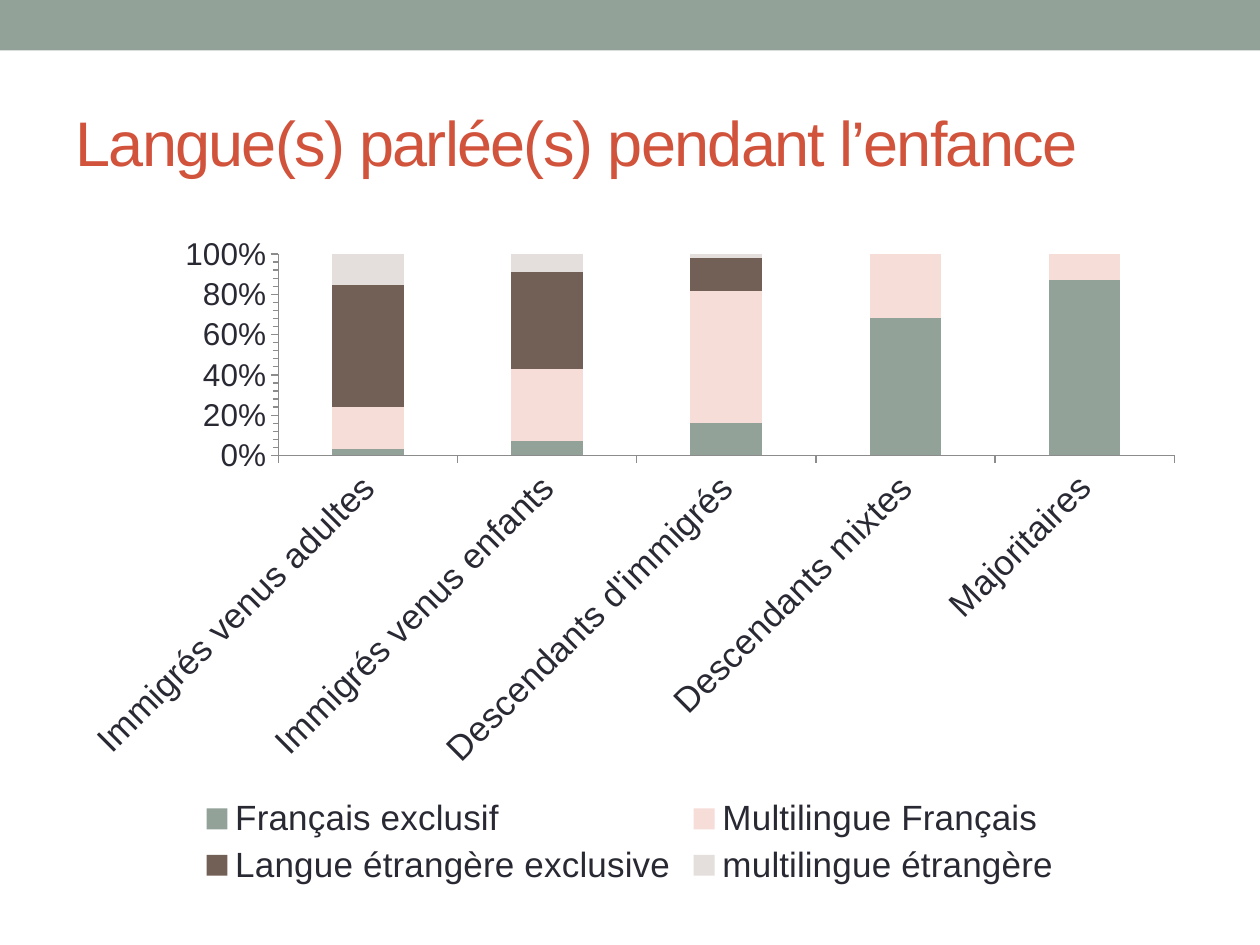
"""Build a slide charting the languages spoken in childhood by origin group."""
from dataclasses import dataclass

from lxml import etree
from pptx import Presentation
from pptx.chart.data import CategoryChartData
from pptx.dml.color import RGBColor
from pptx.enum.chart import XL_CHART_TYPE, XL_LEGEND_POSITION, XL_TICK_MARK
from pptx.enum.shapes import MSO_SHAPE
from pptx.enum.text import MSO_ANCHOR, PP_ALIGN
from pptx.oxml.ns import qn
from pptx.util import Inches, Pt

STACKED = XL_CHART_TYPE.COLUMN_STACKED_100
BOTTOM = XL_LEGEND_POSITION.BOTTOM
OUTSIDE = XL_TICK_MARK.OUTSIDE
RECTANGLE = MSO_SHAPE.RECTANGLE
MIDDLE = MSO_ANCHOR.MIDDLE
LEFT = PP_ALIGN.LEFT


@dataclass(frozen=True)
class Theme:
    font: str = "Arial"
    band: str = "93A299"
    title: str = "D2533C"
    text: str = "292934"
    axis: str = "8C8C8C"
    title_size: int = 36
    label_size: int = 20
    scale_size: int = 18


@dataclass(frozen=True)
class Language:
    name: str
    values: tuple[int, ...]
    color: str


THEME = Theme()
GROUPS = (
    "Immigrés venus adultes",
    "Immigrés venus enfants",
    "Descendants d'immigrés",
    "Descendants mixtes",
    "Majoritaires",
)
LANGUAGES = (
    Language("Français exclusif", (3, 7, 16, 68, 87), THEME.band),
    Language("Multilingue Français", (21, 36, 65, 32, 13), "F6DDD8"),
    Language("Langue étrangère exclusive", (60, 48, 16, 0, 0), "726056"),
    Language("multilingue étrangère", (15, 9, 2, 0, 0), "E4DFDC"),
)
PLOT_LAYOUT = {"x": 0.19, "y": 0.05, "w": 0.79, "h": 0.3}


def rgb(color: str) -> RGBColor:
    return RGBColor.from_string(color)


def set_font(font, size: int, color: str) -> None:
    font.name = THEME.font
    font.size = Pt(size)
    font.color.rgb = rgb(color)


def add_band(slide) -> None:
    sp = slide.shapes.add_shape(RECTANGLE, 0, 0, Inches(10), Inches(0.4))
    sp.shadow.inherit = False
    sp.fill.solid()
    sp.fill.fore_color.rgb = rgb(THEME.band)
    sp.line.fill.background()


def set_title(slide, text: str) -> None:
    sp = slide.shapes.title
    sp.left, sp.top = Inches(0.5), Inches(0.58)
    sp.width, sp.height = Inches(9), Inches(1.08)
    tf = sp.text_frame
    tf.vertical_anchor = MIDDLE
    p = tf.paragraphs[0]
    p.alignment = LEFT
    set_font(p.font, THEME.title_size, THEME.title)
    r = p.add_run()
    r.text = text
    r._r.get_or_add_rPr().set("spc", "-100")


def format_axis(axis, size: int) -> None:
    axis.has_major_gridlines = False
    axis.major_tick_mark = OUTSIDE
    axis.format.line.color.rgb = rgb(THEME.axis)
    axis.format.line.width = Pt(0.75)
    set_font(axis.tick_labels.font, size, THEME.text)


def place_plot(chart) -> None:
    area = chart._chartSpace.chart.plotArea
    for old in area.findall(qn("c:layout")):
        area.remove(old)
    layout = etree.Element(qn("c:layout"))
    manual = etree.SubElement(layout, qn("c:manualLayout"))
    settings = {"layoutTarget": "inner", "xMode": "edge", "yMode": "edge", **PLOT_LAYOUT}
    for tag, value in settings.items():
        etree.SubElement(manual, qn(f"c:{tag}")).set("val", str(value))
    area.insert(0, layout)


def add_language_chart(slide) -> None:
    data = CategoryChartData()
    data.categories = GROUPS
    for language in LANGUAGES:
        data.add_series(language.name, language.values)
    chart = slide.shapes.add_chart(
        STACKED, Inches(0.5), Inches(1.75), Inches(9), Inches(5.33), data
    ).chart
    chart.has_title = False
    set_font(chart.font, 10, THEME.text)

    plot = chart.plots[0]
    plot.gap_width, plot.overlap = 150, 100
    plot.vary_by_categories = False
    for series, language in zip(plot.series, LANGUAGES):
        series.format.fill.solid()
        series.format.fill.fore_color.rgb = rgb(language.color)

    format_axis(chart.category_axis, THEME.label_size)
    labels = chart.category_axis._element.find(qn("c:txPr"))
    labels.find(qn("a:bodyPr")).set("rot", "-2700000")

    scale = chart.value_axis
    format_axis(scale, THEME.scale_size)
    scale.minor_tick_mark = OUTSIDE
    scale.minimum_scale, scale.maximum_scale, scale.major_unit = 0, 1, 0.2
    scale.tick_labels.number_format = "0%"
    scale.tick_labels.number_format_is_linked = False

    chart.has_legend = True
    chart.legend.position = BOTTOM
    chart.legend.include_in_layout = False
    set_font(chart.legend.font, THEME.label_size, THEME.text)
    place_plot(chart)


def main() -> None:
    prs = Presentation()
    prs.slide_width, prs.slide_height = Inches(10), Inches(7.5)
    s = prs.slides.add_slide(prs.slide_layouts[5])
    add_band(s)
    set_title(s, "Langue(s) parlée(s) pendant l’enfance")
    add_language_chart(s)
    prs.save("out.pptx")


if __name__ == "__main__":
    main()
